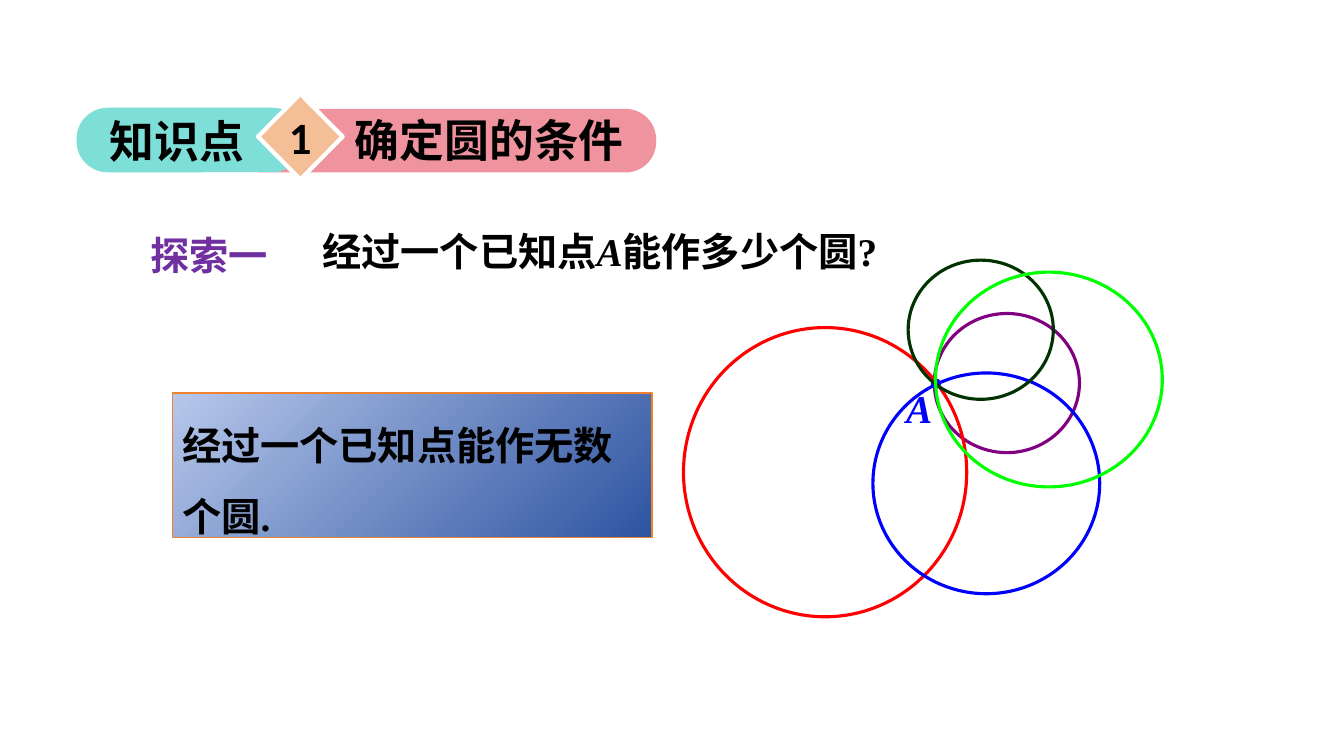
from dataclasses import dataclass

from lxml.etree import SubElement
from pptx import Presentation
from pptx.dml.color import RGBColor
from pptx.enum.shapes import MSO_SHAPE
from pptx.enum.text import MSO_ANCHOR, MSO_AUTO_SIZE, PP_ALIGN
from pptx.oxml.ns import qn
from pptx.shapes.autoshape import Shape
from pptx.slide import Slide
from pptx.util import Pt

BLACK = RGBColor(0, 0, 0)
WHITE = RGBColor(255, 255, 255)
TEAL = RGBColor(0x7D, 0xDF, 0xD7)
PINK = RGBColor(0xEF, 0x94, 0x9E)
PEACH = RGBColor(0xF4, 0xBE, 0x96)
VIOLET = RGBColor(0x70, 0x30, 0xA0)
PURPLE = RGBColor(0x80, 0, 0x80)
RED = RGBColor(255, 0, 0)
BLUE = RGBColor(0, 0, 255)
FOREST = RGBColor(0, 0x33, 0)
LIME = RGBColor(0, 255, 0)
ORANGE = RGBColor(0xEE, 0x82, 0x2F)
PALE = RGBColor(0xB6, 0xC7, 0xEA)
NAVY = RGBColor(0x2E, 0x54, 0xA1)

NOTO = "Noto Sans CJK SC"
TIMES = "Times New Roman"


@dataclass
class Box:
    """A frame in points."""
    left: float
    top: float
    width: float
    height: float


@dataclass
class Style:
    font: str
    size: float
    color: RGBColor = BLACK
    italic: bool = False
    space: float = 1.0
    align: PP_ALIGN = PP_ALIGN.LEFT
    anchor: MSO_ANCHOR = MSO_ANCHOR.TOP
    wrap: bool = True
    side: float = 7.2
    edge: float = 3.6


@dataclass
class Ring:
    box: Box
    color: RGBColor


RINGS = [
    Ring(Box(667.4, 223.9, 103.7, 99.4), PURPLE),
    Ring(Box(488.2, 234, 202.3, 206.6), RED),
    Ring(Box(623.5, 266.4, 162, 157.7), BLUE),
    Ring(Box(648.7, 185.8, 103.7, 99.4), FOREST),
    Ring(Box(668.2, 194.4, 162, 153.4), LIME),
]


def place(shape: Shape, box: Box) -> None:
    shape.left, shape.top = Pt(box.left), Pt(box.top)
    shape.width, shape.height = Pt(box.width), Pt(box.height)


def write(shape: Shape, parts: list[str], style: Style) -> None:
    """Fill a shape with one bold paragraph; a part "A" is slanted."""
    frame = shape.text_frame
    frame.word_wrap = style.wrap
    frame.auto_size = MSO_AUTO_SIZE.NONE
    frame.vertical_anchor = style.anchor
    frame.margin_left = frame.margin_right = Pt(style.side)
    frame.margin_top = frame.margin_bottom = Pt(style.edge)
    para = frame.paragraphs[0]
    para.alignment = style.align
    para.line_spacing = style.space
    font = para.font
    font.name, font.size, font.bold = style.font, Pt(style.size), True
    font.italic = style.italic
    font.color.rgb = style.color
    SubElement(para._p.pPr.find(qn("a:defRPr")), qn("a:ea"), typeface=NOTO)
    for part in parts:
        run = para.add_run()
        run.text = part
        if part == "A":
            run.font.italic = True


def label(slide: Slide, box: Box, parts: list[str], style: Style) -> None:
    shape = slide.shapes.add_textbox(0, 0, 0, 0)
    place(shape, box)
    write(shape, parts, style)


def draw(slide: Slide, kind: MSO_SHAPE, box: Box, fill: RGBColor | None = None,
         line: RGBColor | None = None, weight: float = 1) -> Shape:
    shape = slide.shapes.add_shape(kind, 0, 0, 0, 0)
    place(shape, box)
    shape.shadow.inherit = False
    if fill is None:
        shape.fill.background()
    else:
        shape.fill.solid()
        shape.fill.fore_color.rgb = fill
    if line is None:
        shape.line.fill.background()
    else:
        shape.line.color.rgb = line
        shape.line.width = Pt(weight)
    return shape


def header(slide: Slide) -> None:
    for box, fill in ((Box(165.6, 77.8, 303.1, 45.4), PINK),
                      (Box(54.7, 77, 162, 46.1), TEAL)):
        pill = draw(slide, MSO_SHAPE.ROUNDED_RECTANGLE, box, fill)
        pill.adjustments[0] = 0.48
    label(slide, Box(71.3, 77.8, 114.5, 46.1), ["知识点"],
          Style(NOTO, 32, wrap=False))
    title = slide.shapes.title
    slide.shapes.element.append(title.element)  # in front of the pills
    place(title, Box(246.2, 77, 307.4, 46.1))
    write(title, ["确定圆的条件"], Style(NOTO, 32))
    gem = draw(slide, MSO_SHAPE.DIAMOND, Box(184.3, 67, 60.5, 61.2),
               PEACH, WHITE, 3)
    write(gem, ["1"], Style("Calibri", 32, align=PP_ALIGN.CENTER,
                            anchor=MSO_ANCHOR.MIDDLE, wrap=False))


def figure(slide: Slide) -> None:
    draw(slide, MSO_SHAPE.OVAL, Box(665.3, 270.7, 6.5, 6.5), BLUE, BLUE, 0.75)
    label(slide, Box(641.5, 271.4, 62.6, 39.6), ["A"],
          Style(TIMES, 28, BLUE, italic=True, side=5.8, edge=2.9))
    for ring in RINGS:
        draw(slide, MSO_SHAPE.OVAL, ring.box, line=ring.color, weight=2.25)


def answer(slide: Slide) -> None:
    panel = draw(slide, MSO_SHAPE.RECTANGLE, Box(123.1, 280.8, 342.7, 103),
                 line=ORANGE)
    panel.fill.gradient()
    panel.fill.gradient_angle = 315
    for stop, color in zip(panel.fill.gradient_stops, (PALE, NAVY)):
        stop.color.rgb = color
    write(panel, ["经过一个已知点能作无数个圆."], Style(TIMES, 28, space=1.5))


def main() -> None:
    deck = Presentation()
    deck.slide_width, deck.slide_height = Pt(960), Pt(540)
    slide = deck.slides.add_slide(deck.slide_layouts[5])
    header(slide)
    label(slide, Box(100.1, 154.8, 100.1, 43.2), ["探索一"],
          Style(NOTO, 28, VIOLET, space=1.2, wrap=False))
    label(slide, Box(224.6, 159.8, 630, 39.6),
          ["经过一个已知点", "A", "能作多少个圆?"],
          Style(TIMES, 28, side=5.8, edge=2.9))
    figure(slide)
    answer(slide)
    deck.save("out.pptx")


if __name__ == "__main__":
    main()
